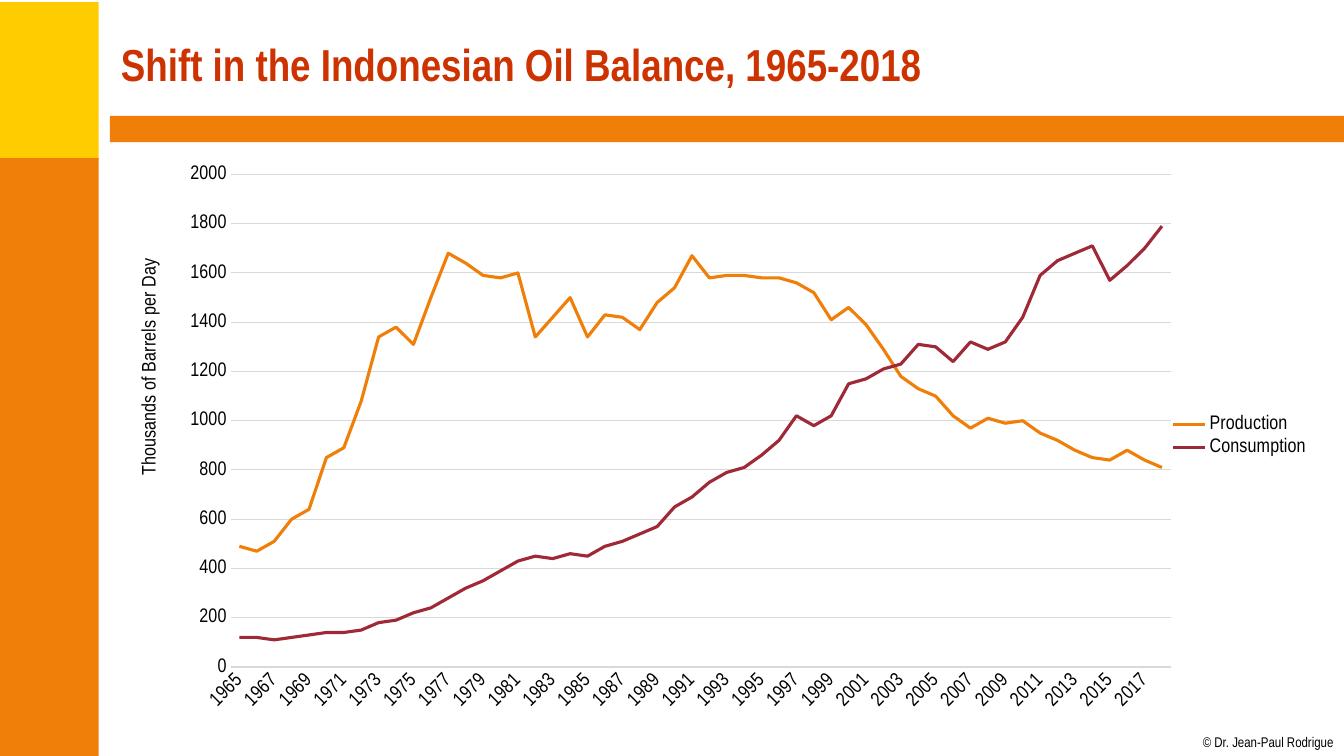
from lxml import etree
from pptx import Presentation
from pptx.chart.data import CategoryChartData
from pptx.dml.color import RGBColor
from pptx.enum.chart import XL_CHART_TYPE, XL_LEGEND_POSITION, XL_TICK_MARK
from pptx.enum.shapes import MSO_SHAPE
from pptx.enum.text import MSO_ANCHOR, PP_ALIGN
from pptx.oxml.ns import qn
from pptx.util import Inches, Pt

FONT = "Arial Narrow"
BLACK = RGBColor(0x00, 0x00, 0x00)
YELLOW = RGBColor(0xFF, 0xCC, 0x00)
ORANGE = RGBColor(0xF0, 0x7F, 0x09)
MAROON = RGBColor(0x9F, 0x29, 0x36)
RED = RGBColor(0xCC, 0x33, 0x00)
GREY = RGBColor(0xD9, 0xD9, 0xD9)
RECT = MSO_SHAPE.RECTANGLE
LINE = XL_CHART_TYPE.LINE
RIGHT = XL_LEGEND_POSITION.RIGHT
NO_TICK = XL_TICK_MARK.NONE
MIDDLE = MSO_ANCHOR.MIDDLE
ALIGN_LEFT = PP_ALIGN.LEFT


def write(tf, text, size=14, color=BLACK, bold=False, align=ALIGN_LEFT):
    p = tf.paragraphs[0]
    p.alignment = align
    r = p.add_run()
    r.text = text
    r.font.name = FONT
    r.font.size = Pt(size)
    r.font.bold = bold
    r.font.color.rgb = color


def set_layout(parent, index, **settings):
    for old in parent.findall(qn("c:layout")):
        parent.remove(old)
    layout = etree.Element(qn("c:layout"))
    manual = etree.SubElement(layout, qn("c:manualLayout"))
    for tag, value in settings.items():
        etree.SubElement(manual, qn("c:" + tag)).set("val", str(value))
    parent.insert(index, layout)


prs = Presentation()
prs.slide_width = Inches(13.33)
prs.slide_height = Inches(7.5)
s = prs.slides.add_slide(prs.slide_layouts[5])

for left, top, width, height, color in [
    (-0.02, 0.02, 1, 1.58, YELLOW),
    (-0.02, 1.57, 1, 5.93, ORANGE),
    (1.09, 1.15, 12.24, 0.26, ORANGE),
]:
    sp = s.shapes.add_shape(RECT, Inches(left), Inches(top), Inches(width), Inches(height))
    sp.shadow.inherit = False
    sp.fill.solid()
    sp.fill.fore_color.rgb = color
    sp.line.fill.background()

title = s.shapes.title
title.left, title.top = Inches(1.1), Inches(0.11)
title.width, title.height = Inches(12), Inches(1.04)
title.text_frame.vertical_anchor = MIDDLE
write(title.text_frame, "Shift in the Indonesian Oil Balance, 1965-2018", size=32, color=RED, bold=True)

credit = s.shapes.add_textbox(Inches(11.93), Inches(7.28), Inches(1.31), Inches(0.17))
tf = credit.text_frame
tf.margin_left = tf.margin_right = tf.margin_top = tf.margin_bottom = 0
tf.word_wrap = False
write(tf, "© Dr. Jean-Paul Rodrigue", size=10)

production = [
    490, 470, 510, 600, 640, 850, 890, 1080, 1340, 1380, 1310, 1500, 1680, 1640,
    1590, 1580, 1600, 1340, 1420, 1500, 1340, 1430, 1420, 1370, 1480, 1540, 1670,
    1580, 1590, 1590, 1580, 1580, 1560, 1520, 1410, 1460, 1390, 1290, 1180, 1130,
    1100, 1020, 970, 1010, 990, 1000, 950, 920, 880, 850, 840, 880, 840, 810,
]
consumption = [
    120, 120, 110, 120, 130, 140, 140, 150, 180, 190, 220, 240, 280, 320,
    350, 390, 430, 450, 440, 460, 450, 490, 510, 540, 570, 650, 690,
    750, 790, 810, 860, 920, 1020, 980, 1020, 1150, 1170, 1210, 1230, 1310,
    1300, 1240, 1320, 1290, 1320, 1420, 1590, 1650, 1680, 1710, 1570, 1630, 1700, 1790,
]
data = CategoryChartData(number_format="0")
data.categories = [str(year) for year in range(1965, 2019)]
data.add_series("Production", production)
data.add_series("Consumption", consumption)
chart = s.shapes.add_chart(LINE, Inches(1.1), Inches(1.43), Inches(12), Inches(5.79), data).chart
chart.has_title = False
chart.font.name = FONT
chart.font.size = Pt(14)
chart.font.color.rgb = BLACK
chart.has_legend = True
chart.legend.position = RIGHT
chart.legend.include_in_layout = False

plot = chart.plots[0]
plot.vary_by_categories = False
for series, color in zip(plot.series, (ORANGE, MAROON)):
    series.smooth = False
    series.format.line.color.rgb = color
    series.format.line.width = Pt(2.25)

years = chart.category_axis
barrels = chart.value_axis
for axis in (years, barrels):
    axis.major_tick_mark = axis.minor_tick_mark = NO_TICK
for line in (years.format.line, barrels.major_gridlines.format.line):
    line.color.rgb = GREY
    line.width = Pt(0.75)
for font in (years.tick_labels.font, barrels.tick_labels.font, chart.legend.font):
    font.name = FONT
    font.size = Pt(14)
    font.color.rgb = BLACK

barrels.format.line.fill.background()
barrels.minimum_scale, barrels.maximum_scale = 0, 2000
barrels.major_unit = 200
barrels.tick_labels.number_format = "0"
barrels.tick_labels.number_format_is_linked = False
write(barrels.axis_title.text_frame, "Thousands of Barrels per Day", align=None)

axis_title = barrels.axis_title._element
axis_title.find(".//" + qn("a:bodyPr")).set("rot", "-5400000")
years._element.find(qn("c:txPr")).find(qn("a:bodyPr")).set("rot", "-2700000")
skip = etree.Element(qn("c:tickLblSkip"))
skip.set("val", "2")
years._element.find(qn("c:noMultiLvlLbl")).addprevious(skip)

set_layout(axis_title, 1, xMode="edge", yMode="edge", x=0.02, y=0.19)
set_layout(
    chart._chartSpace.chart.plotArea, 0, layoutTarget="inner",
    xMode="edge", yMode="edge", x=0.099, y=0.052, w=0.777, h=0.844,
)

prs.save("out.pptx")
